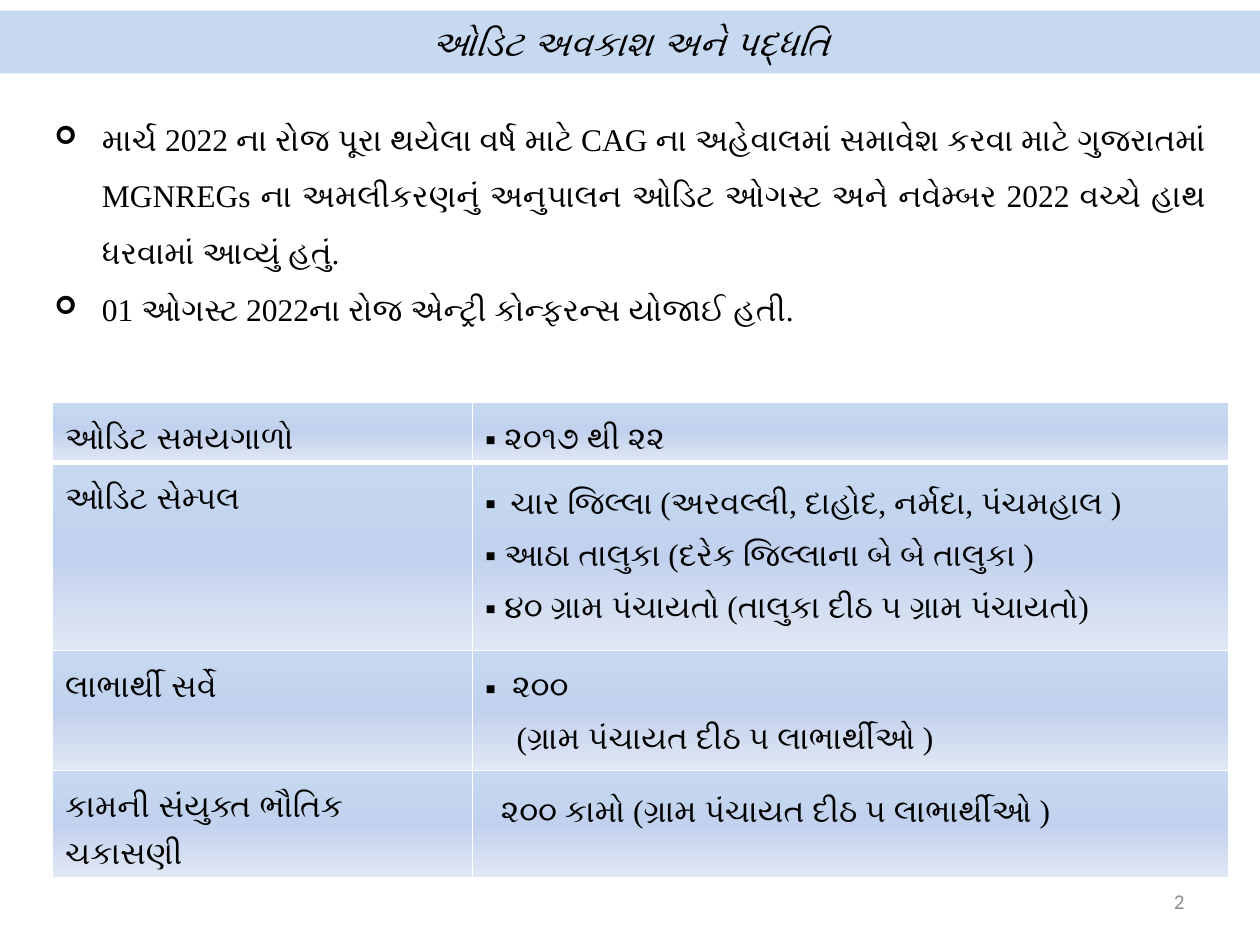
"""Build the audit scope and methodology slide."""
from lxml.etree import SubElement
from pptx import Presentation
from pptx.dml.color import RGBColor as Rgb
from pptx.enum.text import MSO_ANCHOR as Anchor, MSO_AUTO_SIZE as AutoSize, PP_ALIGN as Align
from pptx.oxml.ns import qn
from pptx.util import Pt

COLORS = {"band": "C6D9F1", "middle": "C2D1ED", "pale": "E1E8F5",
          "white": "FFFFFF", "text": "000000", "number": "8C8C8C"}
TITLE = "ઓડિટ અવકાશ અને પદ્ધતિ"
POINTS = [
    "માર્ચ 2022 ના રોજ પૂરા થયેલા વર્ષ માટે CAG ના અહેવાલમાં સમાવેશ કરવા માટે ગુજરાતમાં "
    "MGNREGs ના અમલીકરણનું અનુપાલન ઓડિટ ઓગસ્ટ અને નવેમ્બર 2022 વચ્ચે હાથ ધરવામાં આવ્યું હતું.",
    "01 ઓગસ્ટ 2022ના રોજ એન્ટ્રી કોન્ફરન્સ યોજાઈ હતી.",
]
ROWS = [
    (34.5, "ઓડિટ સમયગાળો", [("૨૦૧૭ થી ૨૨", "▪", 11)]),
    (107.5, "ઓડિટ સેમ્પલ", [
        ("ચાર જિલ્લા (અરવલ્લી, દાહોદ, નર્મદા, પંચમહાલ )", "▪", 14.5),
        ("આઠા તાલુકા (દરેક જિલ્લાના બે બે તાલુકા )", "▪", 11),
        ("૪૦ ગ્રામ પંચાયતો (તાલુકા દીઠ ૫ ગ્રામ પંચાયતો)", "▪", 11)]),
    (68.5, "લાભાર્થી સર્વે", [
        ("૨૦૦", "▪", 15.5),
        ("(ગ્રામ પંચાયત દીઠ ૫ લાભાર્થીઓ )", None, 18)]),
    (43.5, "કામની સંયુક્ત ભૌતિક ચકાસણી", [
        ("૨૦૦ કામો (ગ્રામ પંચાયત દીઠ ૫ લાભાર્થીઓ )", None, 9)]),
]
COLUMNS = [240, 432]
STOPS = [(0, "band"), (50, "middle"), (100, "pale")]


def write(frame, text, first=False, size=18, font="Times New Roman", color="text",
          bold=False, italic=False, align=Align.LEFT, spacing=1.5,
          bullet=None, bullet_size=100, indent=0):
    para = frame.paragraphs[0] if first else frame.add_paragraph()
    para.alignment, para.line_spacing = align, spacing
    para.space_before = para.space_after = Pt(0)
    span = para.add_run()
    span.text = text
    span.font.size, span.font.name = Pt(size), font
    span.font.bold, span.font.italic = bold, italic
    span.font.color.rgb = Rgb.from_string(COLORS[color])
    props = para._p.get_or_add_pPr()
    props.set("marL", str(Pt(indent)))
    props.set("indent", str(-Pt(indent) if bullet else 0))
    if bullet:
        tint = SubElement(props, qn("a:buClr"))
        SubElement(tint, qn("a:srgbClr"), val=COLORS["text"])
        SubElement(props, qn("a:buSzPct"), val=str(bullet_size * 1000))
        SubElement(props, qn("a:buFont"), typeface="Wingdings" if bullet == "➢" else "Arial")
        SubElement(props, qn("a:buChar"), char=bullet)
    else:
        SubElement(props, qn("a:buNone"))


def place(box, left, top, width, height):
    box.left, box.top, box.width, box.height = map(Pt, (left, top, width, height))


def style_cell(cell, bottom):
    props = cell._tc.get_or_add_tcPr()
    for side, weight in (("L", 1), ("R", 1), ("T", 1), ("B", bottom)):
        line = SubElement(props, qn(f"a:ln{side}"), w=str(Pt(weight)))
        solid = SubElement(line, qn("a:solidFill"))
        SubElement(solid, qn("a:srgbClr"), val=COLORS["white"])
    gradient = SubElement(props, qn("a:gradFill"), rotWithShape="1")
    stops = SubElement(gradient, qn("a:gsLst"))
    for position, color in STOPS:
        stop = SubElement(stops, qn("a:gs"), pos=str(position * 1000))
        SubElement(stop, qn("a:srgbClr"), val=COLORS[color])
    SubElement(gradient, qn("a:lin"), ang="5400000", scaled="0")


def add_table(page):
    heights = [height for height, _, _ in ROWS]
    frame = page.shapes.add_table(len(ROWS), len(COLUMNS), Pt(30), Pt(229.75),
                                  Pt(sum(COLUMNS)), Pt(sum(heights)))
    table = frame.table
    table.first_row = table.horz_banding = False
    for column, width in zip(table.columns, COLUMNS):
        column.width = Pt(width)
    for index, (height, label, lines) in enumerate(ROWS):
        table.rows[index].height = Pt(height)
        name, detail = table.cell(index, 0), table.cell(index, 1)
        write(name.text_frame, label, first=True, bold=True)
        for number, (text, bullet, indent) in enumerate(lines):
            write(detail.text_frame, text, first=number == 0, bullet=bullet, indent=indent)
        for cell in (name, detail):
            style_cell(cell, bottom=3 if index == 0 else 1)


def main():
    deck = Presentation()
    deck.slide_width, deck.slide_height = Pt(720), Pt(540)
    page = deck.slides.add_slide(deck.slide_layouts[1])
    title, body = page.placeholders
    place(title, 0, 6, 720, 36)
    title.fill.solid()
    title.fill.fore_color.rgb = Rgb.from_string(COLORS["band"])
    title.text_frame.vertical_anchor = Anchor.MIDDLE
    write(title.text_frame, TITLE, first=True, size=20, bold=True, italic=True,
          align=Align.CENTER, spacing=1.0)
    place(body, 24, 54, 672, 156)
    for index, text in enumerate(POINTS):
        write(body.text_frame, text, first=index == 0, align=Align.JUSTIFY,
              bullet="➢", bullet_size=80, indent=27)
    add_table(page)
    number = page.shapes.add_textbox(Pt(516), Pt(500.5), Pt(168), Pt(28.75))
    number.text_frame.vertical_anchor = Anchor.MIDDLE
    write(number.text_frame, "2", first=True, size=12, font="Calibri", color="number",
          align=Align.RIGHT, spacing=1.0)
    for box in (title, body, number):
        box.text_frame.word_wrap = True
        box.text_frame.auto_size = AutoSize.NONE
    deck.save("out.pptx")


if __name__ == "__main__":
    main()
